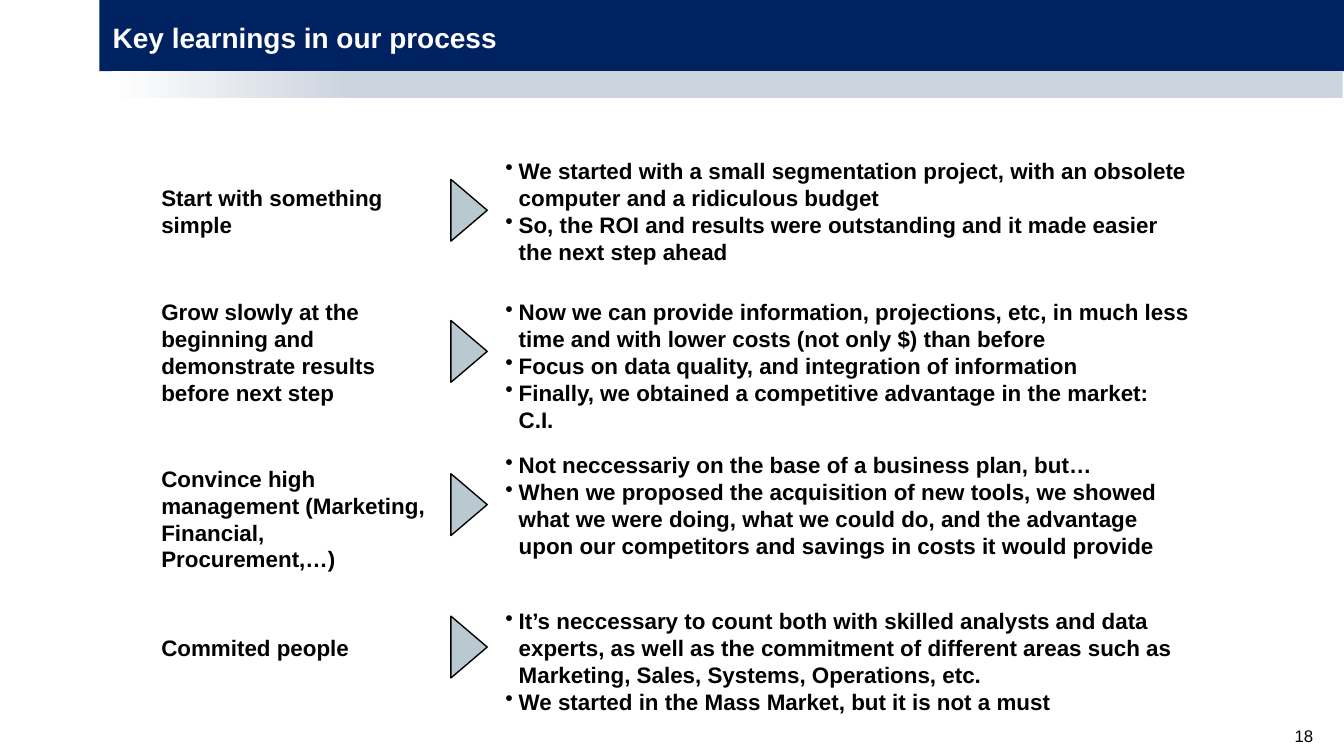
from dataclasses import dataclass

from lxml import etree
from pptx import Presentation
from pptx import util as u
from pptx.dml.color import RGBColor
from pptx.enum import shapes, text
from pptx.oxml import ns

NAVY = RGBColor(0x00, 0x22, 0x61)
MIST = RGBColor(0xCC, 0xD4, 0xDF)
STEEL = RGBColor(0xB8, 0xC9, 0xD0)
WHITE = RGBColor(0xFF, 0xFF, 0xFF)
BLACK = RGBColor(0x00, 0x00, 0x00)

FONT = "Arial"
LABEL_LEFT, LABEL_WIDTH = 1.05, 2.35
DETAIL_LEFT, DETAIL_WIDTH = 3.61, 5.34
ARROW_LEFT, ARROW_WIDTH, ARROW_HEIGHT = 3.26, 0.46, 0.27
INDENT = 0.1


@dataclass
class Learning:
    label: str
    label_top: float
    label_height: float
    details: list[str]
    detail_top: float
    detail_height: float
    arrow_top: float


LEARNINGS = [
    Learning("Start with something simple", 1.32, 0.5, [
        "We started with a small segmentation project, with an obsolete computer and a ridiculous budget",
        "So, the ROI and results were outstanding and it made easier the next step ahead",
    ], 1.12, 0.91, 1.43),
    Learning("Grow slowly at the beginning and demonstrate results before next step", 2.17, 0.91, [
        "Now we can provide information, projections, etc, in much less time and with lower costs (not only $) than before",
        "Focus on data quality, and integration of information",
        "Finally, we obtained a competitive advantage in the market: C.I.",
    ], 2.17, 1.11, 2.48),
    Learning("Convince high management (Marketing, Financial, Procurement,…)", 3.41, 0.91, [
        "Not neccessariy on the base of a business plan, but…",
        "When we proposed the acquisition of new tools, we showed what we were doing, what we could do, "
        "and the advantage upon our competitors and savings in costs it would provide",
    ], 3.31, 0.91, 3.62),
    Learning("Commited people", 4.67, 0.3, [
        "It’s neccessary to count both with skilled analysts and data experts, as well as the commitment "
        "of different areas such as Marketing, Sales, Systems, Operations, etc.",
        "We started in the Mass Market, but it is not a must",
    ], 4.47, 0.91, 4.68),
]


def add_block(page, kind, left: float, top: float, width: float, height: float, color: RGBColor):
    block = page.shapes.add_shape(kind, u.Inches(left), u.Inches(top), u.Inches(width), u.Inches(height))
    block.shadow.inherit = False
    block.fill.solid()
    block.fill.fore_color.rgb = color
    block.line.fill.background()
    return block


def add_bullet(para) -> None:
    properties = para._p.get_or_add_pPr()
    properties.set("marL", str(u.Inches(INDENT)))
    properties.set("indent", str(-u.Inches(INDENT)))
    etree.SubElement(properties, ns.qn("a:buChar"), char="•")


def add_text(page, lines: list[str], left: float, top: float, width: float, height: float,
             size: float, color: RGBColor = BLACK, bold: bool = True, bullets: bool = False):
    box = page.shapes.add_textbox(u.Inches(left), u.Inches(top), u.Inches(width), u.Inches(height))
    frame = box.text_frame
    frame.word_wrap = True
    frame.text = "\n".join(lines)
    for para in frame.paragraphs:
        if bullets:
            add_bullet(para)
        for span in para.runs:
            span.font.name = FONT
            span.font.size = u.Pt(size)
            span.font.bold = bold
            span.font.color.rgb = color
    return frame


def add_body(page, lines: list[str], left: float, top: float, width: float, height: float,
             bullets: bool = False) -> None:
    frame = add_text(page, lines, left, top, width, height, 12, bullets=bullets)
    frame.margin_left = u.Inches(0.15)
    frame.auto_size = text.MSO_AUTO_SIZE.SHAPE_TO_FIT_TEXT


def add_learning(page, learning: Learning) -> None:
    add_body(page, [learning.label], LABEL_LEFT, learning.label_top, LABEL_WIDTH, learning.label_height)
    add_body(page, learning.details, DETAIL_LEFT, learning.detail_top, DETAIL_WIDTH,
             learning.detail_height, bullets=True)
    arrow = add_block(page, shapes.MSO_SHAPE.ISOSCELES_TRIANGLE, ARROW_LEFT, learning.arrow_top,
                      ARROW_WIDTH, ARROW_HEIGHT, STEEL)
    arrow.rotation = 90
    arrow.line.color.rgb = BLACK
    arrow.line.width = u.Pt(0.75)


def main() -> None:
    # Widescreen page, 16 to 9
    deck = Presentation()
    deck.slide_width = u.Inches(10)
    deck.slide_height = u.Inches(10 * 9 / 16)
    page = deck.slides.add_slide(deck.slide_layouts[6])

    # Header bar with a fading strip below
    rectangle = shapes.MSO_SHAPE.RECTANGLE
    add_block(page, rectangle, 0.74, 0, 9.26, 0.53, NAVY)
    add_block(page, rectangle, 1.73, 0.53, 8.26, 0.2, MIST)
    fade = add_block(page, rectangle, 0.83, 0.53, 1.79, 0.2, WHITE)
    fade.fill.gradient()
    fade.fill.gradient_angle = 0
    for stop, position, color in zip(fade.fill.gradient_stops, (0, 1), (WHITE, MIST)):
        stop.position = position
        stop.color.rgb = color

    # Title and page number
    title = add_text(page, ["Key learnings in our process"], 0.74, 0.03, 8.48, 0.5, 15, WHITE)
    title.vertical_anchor = text.MSO_ANCHOR.MIDDLE
    number = add_text(page, ["18"], 7.54, 5.35, 2.33, 0.39, 9, bold=False)
    number.paragraphs[0].alignment = text.PP_ALIGN.RIGHT

    # Learnings, one row each
    for learning in LEARNINGS:
        add_learning(page, learning)

    deck.save("out.pptx")


if __name__ == "__main__":
    main()
